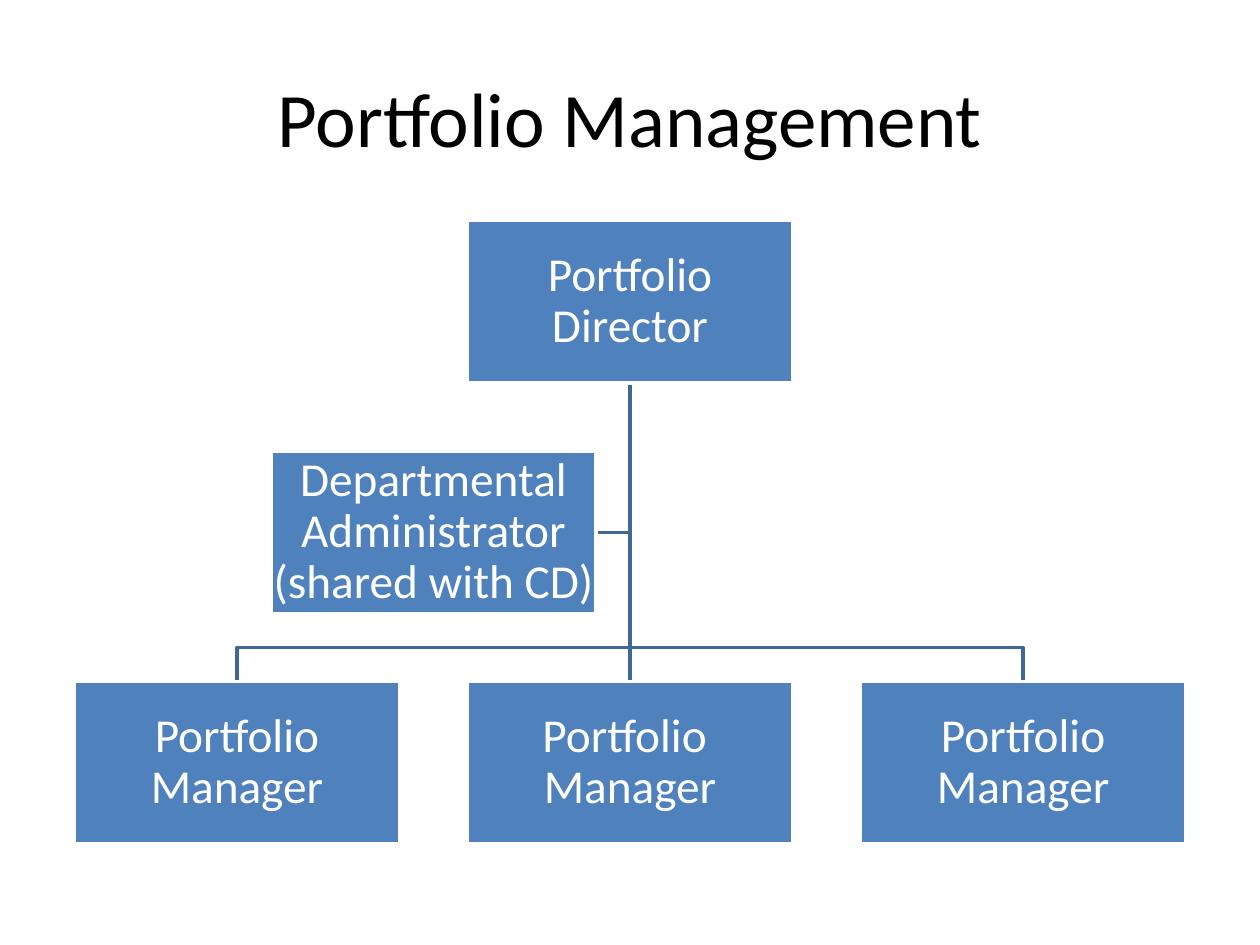
from dataclasses import dataclass

from lxml.etree import SubElement
from pptx import Presentation
from pptx.dml.color import RGBColor
from pptx.enum.shapes import MSO_CONNECTOR as Connector, MSO_SHAPE as Preset
from pptx.enum.text import MSO_ANCHOR as Anchor, PP_ALIGN as Align
from pptx.oxml.ns import qn
from pptx.shapes.autoshape import Shape
from pptx.slide import Slide
from pptx.text.text import TextFrame
from pptx.util import Inches, Pt

FONT = "Calibri"
BLACK = "000000"
WHITE = "FFFFFF"
BOX_BLUE = "4F81BD"
LINE_BLUE = "3F6797"
BOX_WIDTH = 2.58
BOX_HEIGHT = 1.29
CENTER = 5
COLUMN_STEP = 3.12
DIRECTOR_TOP = 1.75
ASSISTANT_TOP = 3.58
MANAGER_TOP = 5.41
BRANCH_Y = 5.14


@dataclass(frozen=True)
class Position:
    title: str
    center: float
    top: float

    @property
    def left(self) -> float:
        return self.center - BOX_WIDTH / 2

    @property
    def right(self) -> float:
        return self.center + BOX_WIDTH / 2

    @property
    def middle(self) -> float:
        return self.top + BOX_HEIGHT / 2

    @property
    def bottom(self) -> float:
        return self.top + BOX_HEIGHT


DIRECTOR = Position("Portfolio Director", CENTER, DIRECTOR_TOP)
LEFT_MANAGER = Position("Portfolio Manager", CENTER - COLUMN_STEP, MANAGER_TOP)
MIDDLE_MANAGER = Position("Portfolio  Manager", CENTER, MANAGER_TOP)
RIGHT_MANAGER = Position("Portfolio Manager", CENTER + COLUMN_STEP, MANAGER_TOP)
ADMINISTRATOR = Position(
    "Departmental Administrator (shared with CD)",
    CENTER - COLUMN_STEP / 2,
    ASSISTANT_TOP,
)


def color(value: str) -> RGBColor:
    return RGBColor.from_string(value)


def write_text(frame: TextFrame, text: str, size: float, text_color: str) -> None:
    frame.word_wrap = True
    frame.vertical_anchor = Anchor.MIDDLE
    paragraph = frame.paragraphs[0]
    paragraph.alignment = Align.CENTER
    run = paragraph.add_run()
    run.text = text
    run.font.name = FONT
    run.font.size = Pt(size)
    run.font.color.rgb = color(text_color)


def add_title(slide: Slide, text: str) -> None:
    shape = slide.shapes.add_textbox(Inches(0.5), Inches(0.3), Inches(9), Inches(1.25))
    write_text(shape.text_frame, text, 44, BLACK)


def add_branch(slide: Slide, points: list[tuple[float, float]]) -> None:
    start, *rest = [(Inches(x), Inches(y)) for x, y in points]
    builder = slide.shapes.build_freeform(*start)
    builder.add_line_segments(rest, close=False)
    shape = builder.convert_to_shape()
    shape.shadow.inherit = False
    shape.fill.background()
    shape.line.color.rgb = color(LINE_BLUE)
    shape.line.width = Pt(2)


def add_box(slide: Slide, position: Position) -> Shape:
    shape = slide.shapes.add_shape(
        Preset.RECTANGLE,
        Inches(position.left),
        Inches(position.top),
        Inches(BOX_WIDTH),
        Inches(BOX_HEIGHT),
    )
    shape.shadow.inherit = False
    shape.fill.solid()
    shape.fill.fore_color.rgb = color(BOX_BLUE)
    shape.line.color.rgb = color(WHITE)
    shape.line.width = Pt(2)
    frame = shape.text_frame
    frame.margin_left = frame.margin_right = Inches(0.02)
    frame.margin_top = frame.margin_bottom = Inches(0.02)
    write_text(frame, position.title, 27, WHITE)
    frame.paragraphs[0].line_spacing = 0.9
    return shape


def main() -> None:
    presentation = Presentation()
    presentation.slide_width = Inches(10)
    presentation.slide_height = Inches(7.5)
    slide = presentation.slides.add_slide(presentation.slide_layouts[6])

    add_title(slide, "Portfolio Management")

    trunk_start = (CENTER, DIRECTOR.bottom)
    add_branch(
        slide,
        [
            trunk_start,
            (CENTER, ADMINISTRATOR.middle),
            (ADMINISTRATOR.right, ADMINISTRATOR.middle),
        ],
    )
    for manager in (RIGHT_MANAGER, LEFT_MANAGER):
        add_branch(
            slide,
            [
                trunk_start,
                (CENTER, BRANCH_Y),
                (manager.center, BRANCH_Y),
                (manager.center, manager.top),
            ],
        )

    trunk = slide.shapes.add_connector(
        Connector.STRAIGHT,
        Inches(CENTER),
        Inches(DIRECTOR.bottom),
        Inches(CENTER),
        Inches(MANAGER_TOP),
    )
    trunk.line.color.rgb = color(LINE_BLUE)
    trunk.line.width = Pt(2)
    SubElement(trunk._element.spPr, qn("a:effectLst"))

    director_box = add_box(slide, DIRECTOR)
    add_box(slide, LEFT_MANAGER)
    middle_box = add_box(slide, MIDDLE_MANAGER)
    add_box(slide, RIGHT_MANAGER)
    add_box(slide, ADMINISTRATOR)
    trunk.begin_connect(director_box, 2)
    trunk.end_connect(middle_box, 0)

    presentation.save("out.pptx")


if __name__ == "__main__":
    main()
